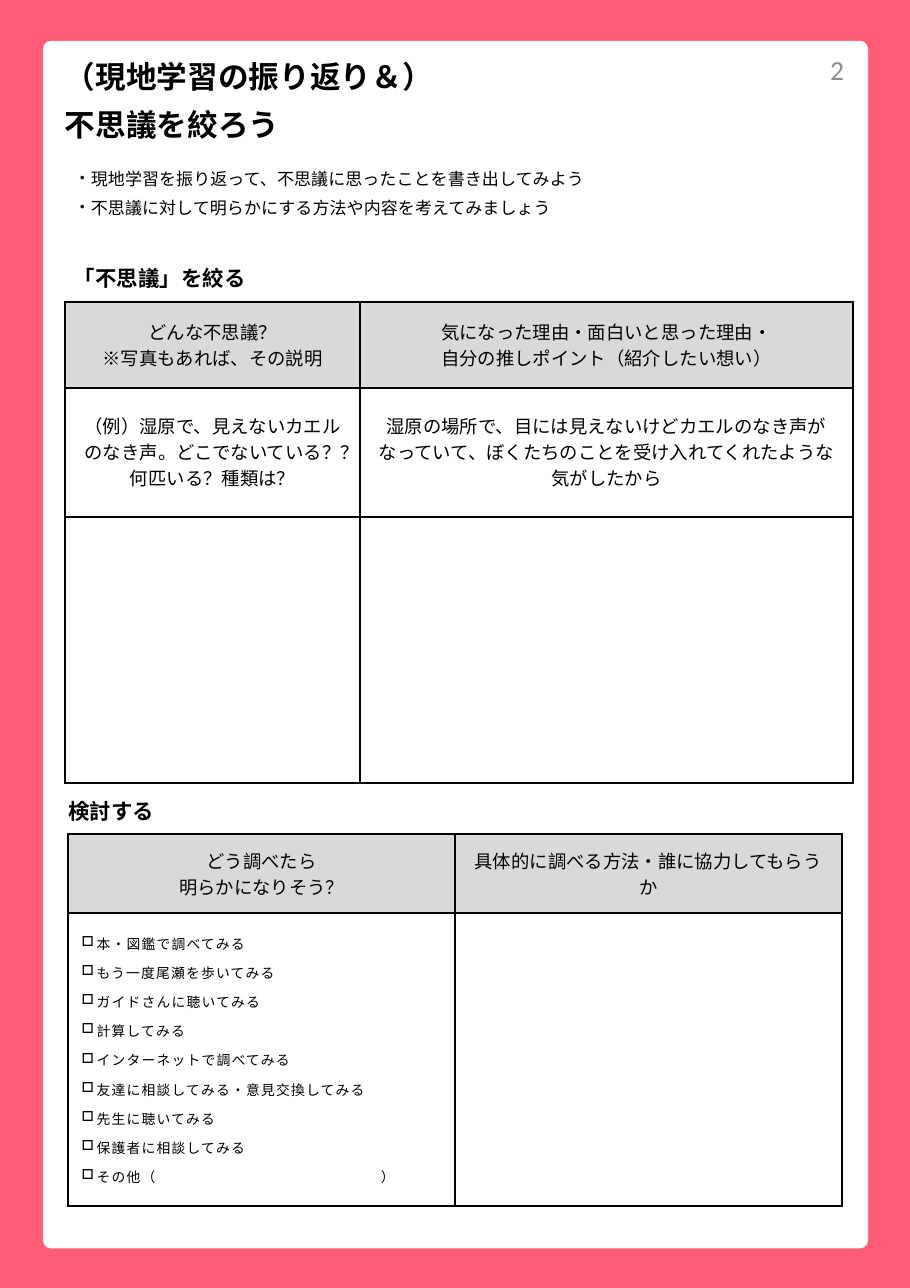
from lxml import etree
from pptx import Presentation
from pptx.dml.color import RGBColor
from pptx.enum.shapes import MSO_SHAPE
from pptx.enum.text import MSO_ANCHOR, MSO_AUTO_SIZE, PP_ALIGN
from pptx.oxml.ns import qn
from pptx.util import Inches, Pt

LEFT, CENTER, RIGHT = PP_ALIGN.LEFT, PP_ALIGN.CENTER, PP_ALIGN.RIGHT
TOP, MIDDLE = MSO_ANCHOR.TOP, MSO_ANCHOR.MIDDLE
FIXED = MSO_AUTO_SIZE.NONE
ROUNDED = MSO_SHAPE.ROUNDED_RECTANGLE

WIDTH, HEIGHT = Inches(8.26), Inches(11.69)
COLORS = {"frame": "FF5D77", "card": "FFFFFF", "header": "D9D9D9",
          "ink": "000000", "number": "8C8C8C"}
TITLE = ["（現地学習の振り返り＆）", "不思議を絞ろう"]
GUIDE = ["現地学習を振り返って、不思議に思ったことを書き出してみよう",
         "不思議に対して明らかにする方法や内容を考えてみましょう"]
WONDERS = [
    [["どんな不思議？", "※写真もあれば、その説明"],
     ["気になった理由・面白いと思った理由・", "自分の推しポイント（紹介したい想い）"]],
    [["（例）湿原で、見えないカエルのなき声。どこでないている？？", "何匹いる？種類は？"],
     ["湿原の場所で、目には見えないけどカエルのなき声がなっていて、ぼくたちのことを受け入れてくれたような",
      "気がしたから"]],
    [[], []],
]
METHODS = [
    [["どう調べたら", "明らかになりそう？"], ["具体的に調べる方法・誰に協力してもらうか"]],
    [[], []],
]
CHECKLIST = ["本・図鑑で調べてみる", "もう一度尾瀬を歩いてみる", "ガイドさんに聴いてみる",
             "計算してみる", "インターネットで調べてみる", "友達に相談してみる・意見交換してみる",
             "先生に聴いてみる", "保護者に相談してみる", "その他（\t）"]


def color(name):
    """Return the named palette colour."""
    return RGBColor.from_string(COLORS[name])


def across(percent):
    """Return a percentage of the slide width."""
    return int(WIDTH * percent / 100)


def down(percent):
    """Return a percentage of the slide height."""
    return int(HEIGHT * percent / 100)


def place(left, top, width, height):
    """Turn percentages of the slide into a position and a size."""
    return across(left), down(top), across(width), down(height)


def move(shape, box):
    """Put a shape in a box."""
    shape.left, shape.top, shape.width, shape.height = box


def prepare_frame(shape):
    """Make a wrapping text frame without insets."""
    frame = shape.text_frame
    frame.word_wrap = True
    frame.auto_size = FIXED
    frame.vertical_anchor = TOP
    frame.margin_left = frame.margin_top = frame.margin_right = frame.margin_bottom = 0
    return frame


def add_run(paragraph, text, size, bold=False, ink="ink", font="Arial"):
    """Add a formatted run to a paragraph."""
    run = paragraph.add_run()
    run.text = text
    run.font.name, run.font.size, run.font.bold = font, Pt(size), bold
    run.font.color.rgb = color(ink)
    return run


def add_paragraphs(frame, lines, size, align=LEFT, spacing=None, after=0):
    """Fill a text frame with one paragraph a line and return them."""
    paragraphs = []
    for index, line in enumerate(lines):
        paragraph = frame.add_paragraph() if index else frame.paragraphs[0]
        paragraph.alignment = align
        paragraph.space_before, paragraph.space_after = Pt(0), Pt(after)
        if spacing:
            paragraph.line_spacing = Pt(spacing)
        add_run(paragraph, line, size)
        paragraphs.append(paragraph)
    return paragraphs


def add_bullet(paragraph, mark, indent):
    """Give a paragraph a hanging bullet."""
    properties = paragraph._p.get_or_add_pPr()
    properties.set("marL", str(indent))
    properties.set("indent", str(-indent))
    etree.SubElement(properties, qn("a:buChar"), char=mark)


def add_tab(paragraph, position):
    """Give a paragraph a left tab stop."""
    tabs = etree.SubElement(paragraph._p.get_or_add_pPr(), qn("a:tabLst"))
    etree.SubElement(tabs, qn("a:tab"), pos=str(position), algn="l")


def add_card(slide):
    """Add the white rounded page."""
    card = slide.shapes.add_shape(ROUNDED, *place(4.72, 3.17, 90.68, 93.76))
    card.adjustments[0] = 0.01
    card.shadow.inherit = False
    card.fill.solid()
    card.fill.fore_color.rgb = color("card")
    card.line.fill.background()
    slide.shapes._spTree.insert(2, card._element)


def add_title(slide):
    """Fill the title placeholder."""
    move(slide.shapes.title, place(7.14, 3.68, 65.38, 7.01))
    paragraph = prepare_frame(slide.shapes.title).paragraphs[0]
    paragraph.alignment, paragraph.line_spacing = LEFT, Pt(31)
    add_run(paragraph, TITLE[0], 20, bold=True)
    paragraph.add_line_break()
    add_run(paragraph, TITLE[1], 20, bold=True)


def add_guide(slide):
    """Fill the body placeholder with the instructions."""
    body = slide.placeholders[1]
    move(body, place(8.11, 12.4, 65.38, 4.28))
    for paragraph in add_paragraphs(prepare_frame(body), GUIDE, 11.1, spacing=19.1):
        add_bullet(paragraph, "・", across(1.8))


def add_heading(slide, text, box, spacing):
    """Add a bold section heading."""
    frame = prepare_frame(slide.shapes.add_textbox(*box))
    paragraph = frame.paragraphs[0]
    paragraph.line_spacing = Pt(spacing)
    add_run(paragraph, text, 14, bold=True)


def add_page_number(slide, text):
    """Add the page number in the upper right corner."""
    frame = slide.shapes.add_textbox(*place(65.74, 3.68, 28.21, 3.42)).text_frame
    frame.word_wrap, frame.vertical_anchor = True, MIDDLE
    frame.paragraphs[0].alignment = RIGHT
    add_run(frame.paragraphs[0], text, 18, ink="number", font="Calibri")


def format_cell(cell, fill):
    """Set the fill, margins and black borders of a cell."""
    cell.fill.solid()
    cell.fill.fore_color.rgb = color(fill)
    cell.vertical_anchor = MIDDLE
    cell.margin_left = cell.margin_right = across(1.45)
    cell.margin_top = cell.margin_bottom = across(1.45)
    properties = cell._tc.get_or_add_tcPr()
    for index, side in enumerate(("lnL", "lnR", "lnT", "lnB")):
        border = etree.Element(qn(f"a:{side}"), w=str(Pt(1.5)))
        solid = etree.SubElement(border, qn("a:solidFill"))
        etree.SubElement(solid, qn("a:srgbClr"), val=COLORS["ink"])
        properties.insert(index, border)


def add_grid(slide, content, left, top, columns, rows):
    """Add a bordered worksheet table with a grey header row."""
    box = place(left, top, sum(columns), sum(rows))
    table = slide.shapes.add_table(len(rows), len(columns), *box).table
    table.first_row = table.horz_banding = False
    for column, width in zip(table.columns, columns):
        column.width = across(width)
    for index, (row, height) in enumerate(zip(table.rows, rows)):
        row.height = down(height)
        for cell, lines in zip(row.cells, content[index]):
            format_cell(cell, "card" if index else "header")
            add_paragraphs(cell.text_frame, lines, 12, CENTER, spacing=16.8)
    return table


def add_checklist(cell):
    """Fill a cell with the research methods to tick."""
    for paragraph in add_paragraphs(cell.text_frame, CHECKLIST, 9, after=6):
        add_bullet(paragraph, "□", across(1.65))
        for run in paragraph.runs:
            run.font._element.set("spc", "80")
    add_tab(paragraph, across(32.9))


def main():
    """Build the worksheet page and save it."""
    presentation = Presentation()
    presentation.slide_width, presentation.slide_height = WIDTH, HEIGHT
    slide = presentation.slides.add_slide(presentation.slide_layouts[1])
    slide.background.fill.solid()
    slide.background.fill.fore_color.rgb = color("frame")
    add_card(slide)
    add_title(slide)
    add_guide(slide)
    add_page_number(slide, "2")
    add_heading(slide, "「不思議」を絞る", place(8.11, 18.05, 74.09, 3.85), 37.9)
    add_grid(slide, WONDERS, 7.14, 23.44, [32.45, 54.12], [6.67, 10, 20.7])
    add_heading(slide, "検討する", place(7.51, 59.28, 85.47, 3.94), 39.6)
    methods = add_grid(slide, METHODS, 7.51, 64.76, [42.49, 42.49], [6.16, 22.75])
    add_checklist(methods.cell(1, 0))
    presentation.save("out.pptx")


if __name__ == "__main__":
    main()
